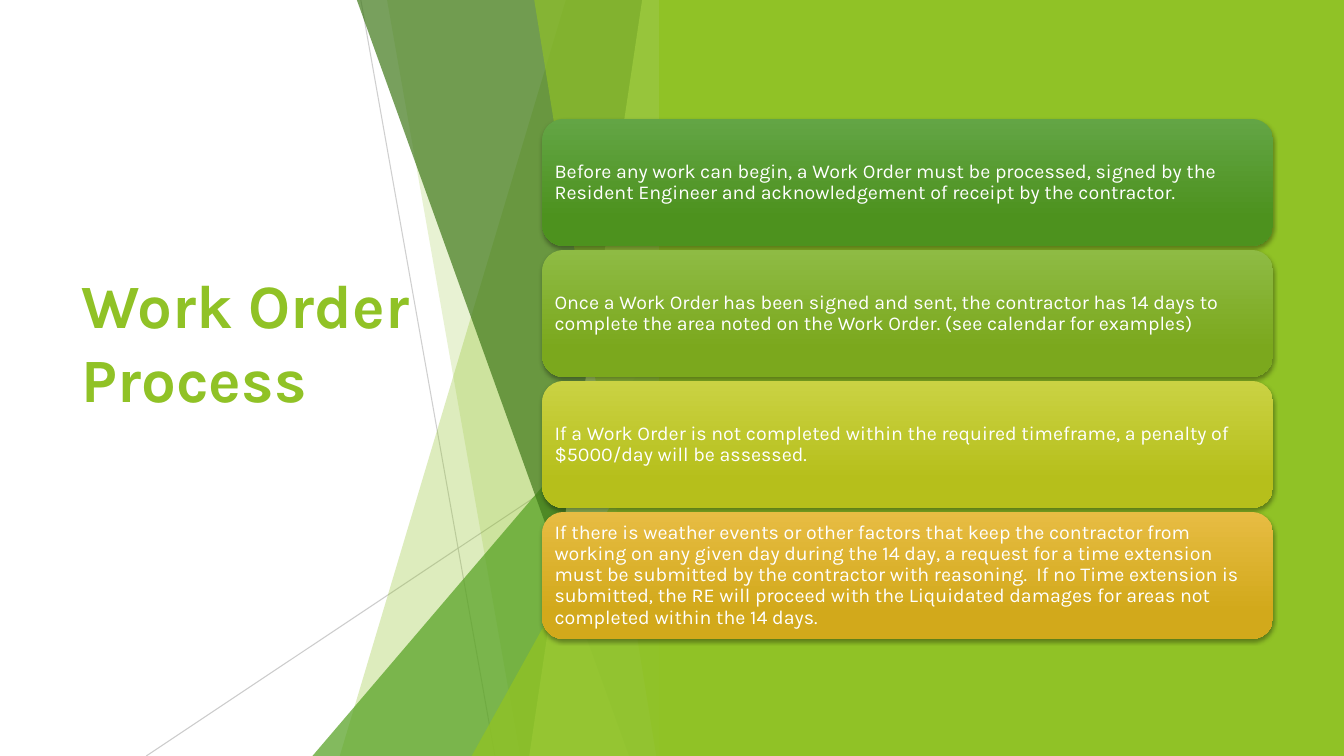
"""Build the Work Order Process slide, with lengths in hundredths of the page."""
from dataclasses import dataclass

from lxml import etree
from pptx import Presentation
from pptx.dml.color import RGBColor
from pptx.enum.shapes import MSO_CONNECTOR, MSO_SHAPE
from pptx.enum.text import MSO_ANCHOR, PP_ALIGN
from pptx.oxml.ns import qn
from pptx.util import Inches, Pt

STRAIGHT = MSO_CONNECTOR.STRAIGHT
RECTANGLE = MSO_SHAPE.RECTANGLE
ROUNDED = MSO_SHAPE.ROUNDED_RECTANGLE
TRIANGLE = MSO_SHAPE.ISOSCELES_TRIANGLE
MIDDLE = MSO_ANCHOR.MIDDLE
LEFT = PP_ALIGN.LEFT

PAGE_WIDTH, PAGE_HEIGHT = Inches(13.33), Inches(7.5)
FONT = "Karla"
RIBBON_EDGE = 49.95
PANEL_LEFT = 49.05
CARD_LEFT, CARD_TOP, CARD_WIDTH, CARD_HEIGHT, CARD_PITCH = 40.35, 15.73, 54.38, 16.8, 17.33
COLORS = {
    "lime": "90C226", "green": "54A021", "forest": "3F7819", "pale": "C0E474",
    "gray": "BFBFBF", "white": "FFFFFF", "black": "000000",
}


@dataclass
class Ray:
    """A thin line between two points."""
    start: tuple[float, float]
    end: tuple[float, float]
    opacity: int


@dataclass
class Ribbon:
    """A full-height band running from its slanted side to the ribbon edge."""
    top_left: float
    bottom_left: float
    color: str
    opacity: int


@dataclass
class Wedge:
    """A right triangle in the bottom corner at the ribbon edge."""
    left: float
    top: float
    color: str
    opacity: int


@dataclass
class Card:
    """A rounded card with a vertical gradient."""
    text: str
    light: str
    deep: str


RAYS = [Ray((26.85, 0), (36.83, 100), 75), Ray((RIBBON_EDGE, 53.73), (10.88, 100), 80)]
FACETS = [
    Ribbon(42.1, 25.28, "lime", 30),
    Ribbon(28.8, 38.7, "lime", 20),
    Wedge(23.25, 44.4, "green", 72),
    Ribbon(26.55, 46.8, "forest", 70),
    Ribbon(47.78, 39.38, "pale", 70),
    Ribbon(39.75, 48.83, "lime", 65),
    Wedge(35.1, 52.4, "lime", 80),
]
CARDS = [
    Card("Before any work can begin, a Work Order must be processed, signed by the "
         "Resident Engineer and acknowledgement of receipt by the contractor.",
         "63A545", "4D921E"),
    Card("Once a Work Order has been signed and sent, the contractor has 14 days to "
         "complete the area noted on the Work Order. (see calendar for examples)",
         "8EBB44", "7BA81D"),
    Card("If a Work Order is not completed within the required timeframe, a penalty of "
         "$5000/day will be assessed.",
         "CAD243", "B6BF1B"),
    Card("If there is weather events or other factors that keep the contractor from "
         "working on any given day during the 14 day, a request for a time extension "
         "must be submitted by the contractor with reasoning.  If no Time extension is "
         "submitted, the RE will proceed with the Liquidated damages for areas not "
         "completed within the 14 days.",
         "E7BC43", "D2A91B"),
]


def across(share: float) -> int:
    """Turn hundredths of the page width into a length."""
    return round(PAGE_WIDTH * share / 100)


def down(share: float) -> int:
    """Turn hundredths of the page height into a length."""
    return round(PAGE_HEIGHT * share / 100)


def area(left: float, top: float, width: float, height: float) -> tuple[int, ...]:
    """Turn shares of the page into a shape's position and size."""
    return across(left), down(top), across(width), down(height)


def set_opacity(shape, percent: int) -> None:
    """Make the shape's first solid colour translucent."""
    color = shape.element.spPr.find(".//" + qn("a:srgbClr"))
    etree.SubElement(color, qn("a:alpha"), val=str(percent * 1000))


def paint(shape, color: str, opacity: int = 100) -> None:
    """Give a shape a flat fill without outline or shadow."""
    shape.shadow.inherit = False
    shape.fill.solid()
    shape.fill.fore_color.rgb = RGBColor.from_string(COLORS[color])
    shape.line.fill.background()
    if opacity < 100:
        set_opacity(shape, opacity)


def write(shape, text: str, *, size: float, color: str, bold: bool = False,
          spacing: float = 1.0, insets: tuple[float, ...] = (0.06, 0.06, 0.06, 0.06)) -> None:
    """Write one left-aligned, vertically centred paragraph; insets are in inches."""
    frame = shape.text_frame
    frame.word_wrap = True
    frame.vertical_anchor = MIDDLE
    frame.margin_left, frame.margin_top, frame.margin_right, frame.margin_bottom = map(Inches, insets)
    para = frame.paragraphs[0]
    para.alignment = LEFT
    para.line_spacing = spacing
    span = para.add_run()
    span.text = text
    span.font.name = FONT
    span.font.size = Pt(size)
    span.font.bold = bold
    span.font.color.rgb = RGBColor.from_string(COLORS[color])


def draw_ray(page, ray: Ray) -> None:
    """Draw a thin translucent line."""
    (start_x, start_y), (end_x, end_y) = ray.start, ray.end
    line = page.shapes.add_connector(
        STRAIGHT, across(start_x), down(start_y), across(end_x), down(end_y))
    line.line.width = Pt(0.75)
    line.line.color.rgb = RGBColor.from_string(COLORS["gray"])
    set_opacity(line, ray.opacity)
    etree.SubElement(line.element.spPr, qn("a:effectLst"))


def draw_facet(page, facet: Ribbon | Wedge) -> None:
    """Draw one translucent ribbon or wedge."""
    if isinstance(facet, Wedge):
        shape = page.shapes.add_shape(
            TRIANGLE, *area(facet.left, facet.top, RIBBON_EDGE - facet.left, 100 - facet.top))
        shape.adjustments[0] = 1
    else:
        outline = page.shapes.build_freeform(across(facet.top_left), 0)
        outline.add_line_segments([
            (across(RIBBON_EDGE), 0), (across(RIBBON_EDGE), PAGE_HEIGHT),
            (across(facet.bottom_left), PAGE_HEIGHT)])
        shape = outline.convert_to_shape()
    paint(shape, facet.color, facet.opacity)


def draw_card(page, card: Card, row: int) -> None:
    """Draw a card with its gradient, soft shadow and text."""
    box = page.shapes.add_shape(
        ROUNDED, *area(CARD_LEFT, CARD_TOP + row * CARD_PITCH, CARD_WIDTH, CARD_HEIGHT))
    box.fill.gradient()
    box.fill.gradient_angle = 270
    for stop, color, position in zip(box.fill.gradient_stops, (card.light, card.deep), (0, 0.78)):
        stop.color.rgb = RGBColor.from_string(color)
        stop.position = position
    box.line.fill.background()
    box.shadow.inherit = False
    effects = box.element.spPr.find(qn("a:effectLst"))
    shadow = etree.SubElement(effects, qn("a:outerShdw"), blurRad=str(Pt(3)),
                              dist=str(Pt(2)), dir="5400000", rotWithShape="0")
    color = etree.SubElement(shadow, qn("a:srgbClr"), val=COLORS["black"])
    etree.SubElement(color, qn("a:alpha"), val="35000")
    write(box, card.text, size=14, color="white", spacing=0.9)


def main() -> None:
    """Build and save the deck."""
    deck = Presentation()
    deck.slide_width, deck.slide_height = PAGE_WIDTH, PAGE_HEIGHT
    page = deck.slides.add_slide(deck.slide_layouts[6])
    title = page.shapes.add_textbox(*area(5.33, 20.13, 29.1, 59.73))
    write(title, "Work Order Process", size=44, color="lime", bold=True,
          insets=(0.1, 0.05, 0.1, 0.78))
    for ray in RAYS:
        draw_ray(page, ray)
    for facet in FACETS:
        draw_facet(page, facet)
    panel = page.shapes.add_shape(RECTANGLE, *area(PANEL_LEFT, 0, 100 - PANEL_LEFT, 100))
    paint(panel, "lime")
    for row, card in enumerate(CARDS):
        draw_card(page, card, row)
    deck.save("out.pptx")


if __name__ == "__main__":
    main()
